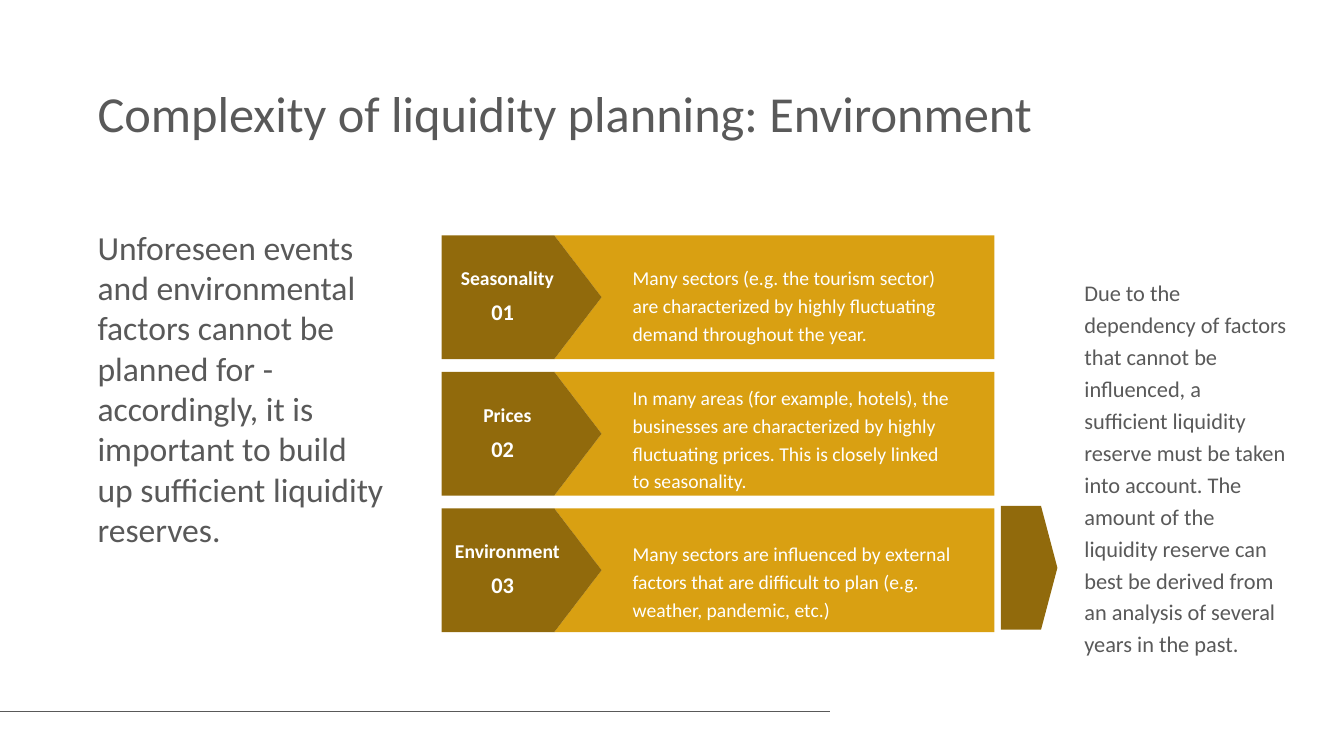
from dataclasses import dataclass

from lxml.etree import SubElement
from pptx import Presentation
from pptx.dml.color import RGBColor
from pptx.enum.text import MSO_ANCHOR, PP_ALIGN
from pptx.oxml.ns import qn
from pptx.util import Pt


@dataclass(frozen=True)
class Theme:
    font: str = "Calibri"
    gray: str = "595959"
    gold: str = "D9A012"
    brown: str = "916A0C"
    white: str = "FFFFFF"
    title: int = 36
    lead: int = 24
    note: int = 16
    body: int = 14


THEME = Theme()

# Label, text, and distance of the text from the top of its row
ROWS = [
    ("Seasonality", "Many sectors (e.g. the tourism sector) are characterized by "
     "highly fluctuating demand throughout the year.", 15),
    ("Prices", "In many areas (for example, hotels), the businesses are characterized "
     "by highly fluctuating prices. This is closely linked to seasonality.", 3),
    ("Environment", "Many sectors are influenced by external factors that are "
     "difficult to plan (e.g. weather, pandemic, etc.)", 17.3),
]
LEAD = ("Unforeseen events and environmental factors cannot be planned for - "
        "accordingly, it is important to build up sufficient liquidity reserves.")
NOTE = ("Due to the dependency of factors that cannot be influenced, a sufficient "
        "liquidity reserve must be taken into account. The amount of the liquidity "
        "reserve can best be derived from an analysis of several years in the past.")


def add_text(slide, box, text, size, color=THEME.gray, bold=False, center=False,
             middle=False, pad=(7.2, 3.6), space=None):
    frame = slide.shapes.add_textbox(*map(Pt, box)).text_frame
    frame.word_wrap = True
    frame.margin_left = frame.margin_right = Pt(pad[0])
    frame.margin_top = frame.margin_bottom = Pt(pad[1])
    frame.vertical_anchor = MSO_ANCHOR.MIDDLE if middle else MSO_ANCHOR.TOP
    para = frame.paragraphs[0]
    para.alignment = PP_ALIGN.CENTER if center else PP_ALIGN.LEFT
    if space:
        para.line_spacing = space
    run = para.add_run()
    run.text = text
    run.font.name = THEME.font
    run.font.size = Pt(size)
    run.font.bold = bold
    run.font.color.rgb = RGBColor.from_string(color)


def add_form(slide, points, color):
    first, *rest = [(Pt(x), Pt(y)) for x, y in points]
    form = slide.shapes.build_freeform(*first)
    form.add_line_segments(rest, close=True)
    shape = form.convert_to_shape()
    shape.shadow.inherit = False
    shape.fill.solid()
    shape.fill.fore_color.rgb = RGBColor.from_string(color)
    shape.line.fill.background()


def add_tag(slide, box, tip):
    """Draw a block whose right side ends in a point of length tip."""
    x, y, w, h = box
    neck = x + w - tip
    add_form(slide, [(neck, y + h), (x, y + h), (x, y), (neck, y),
                     (x + w, y + h / 2)], THEME.brown)


def add_row(slide, box, num, label, text, drop):
    x, y, w, h = box
    wide, tip = 114.2, 33.8
    neck = x + wide - tip
    add_form(slide, [(neck, y), (x + wide, y + h / 2), (neck, y + h),
                     (x + w, y + h), (x + w, y)], THEME.gold)
    add_tag(slide, (x, y, wide, h), tip)
    add_text(slide, (x, y + 18.5, 94, 24.2), label, THEME.body, THEME.white,
             bold=True, center=True)
    add_text(slide, (x + 34, y + 45, 19, 19.4), f"{num:02}", THEME.note, THEME.white,
             bold=True, center=True, middle=True, pad=(0, 0))
    add_text(slide, (x + 129.3, y + drop, 243.4, h - drop), text, THEME.body,
             THEME.white, space=1.19)


def add_rows(slide, box):
    x, y, w, h = box
    high = 88.4
    step = (h - high) / (len(ROWS) - 1)
    for i, row in enumerate(ROWS):
        add_row(slide, (x, y + i * step, w, high), i + 1, *row)


def add_rule(slide, box):
    x, y, w, h = box
    rule = slide.shapes.add_connector(1, Pt(x), Pt(y), Pt(x + w), Pt(y + h))
    rule.line.color.rgb = RGBColor.from_string(THEME.gray)
    rule.line.width = Pt(1)
    SubElement(rule._element.spPr, qn("a:effectLst"))


def main():
    deck = Presentation()
    deck.slide_width, deck.slide_height = Pt(960), Pt(540)
    slide = deck.slides.add_slide(deck.slide_layouts[6])
    add_rule(slide, (0, 508.3, 593, 0))
    add_text(slide, (62.6, 59.8, 836, 63.4),
             "Complexity of liquidity planning: Environment", THEME.title, space=0.9)
    add_text(slide, (62.6, 158.4, 222.5, 239.8), LEAD, THEME.lead)
    add_rows(slide, (315.5, 168.1, 394.8, 283.4))
    add_tag(slide, (715, 361.4, 40.3, 88.4), 11.7)
    add_text(slide, (767.5, 192.2, 160.6, 284.4), NOTE, THEME.note, space=1.19)
    deck.save("out.pptx")


if __name__ == "__main__":
    main()
